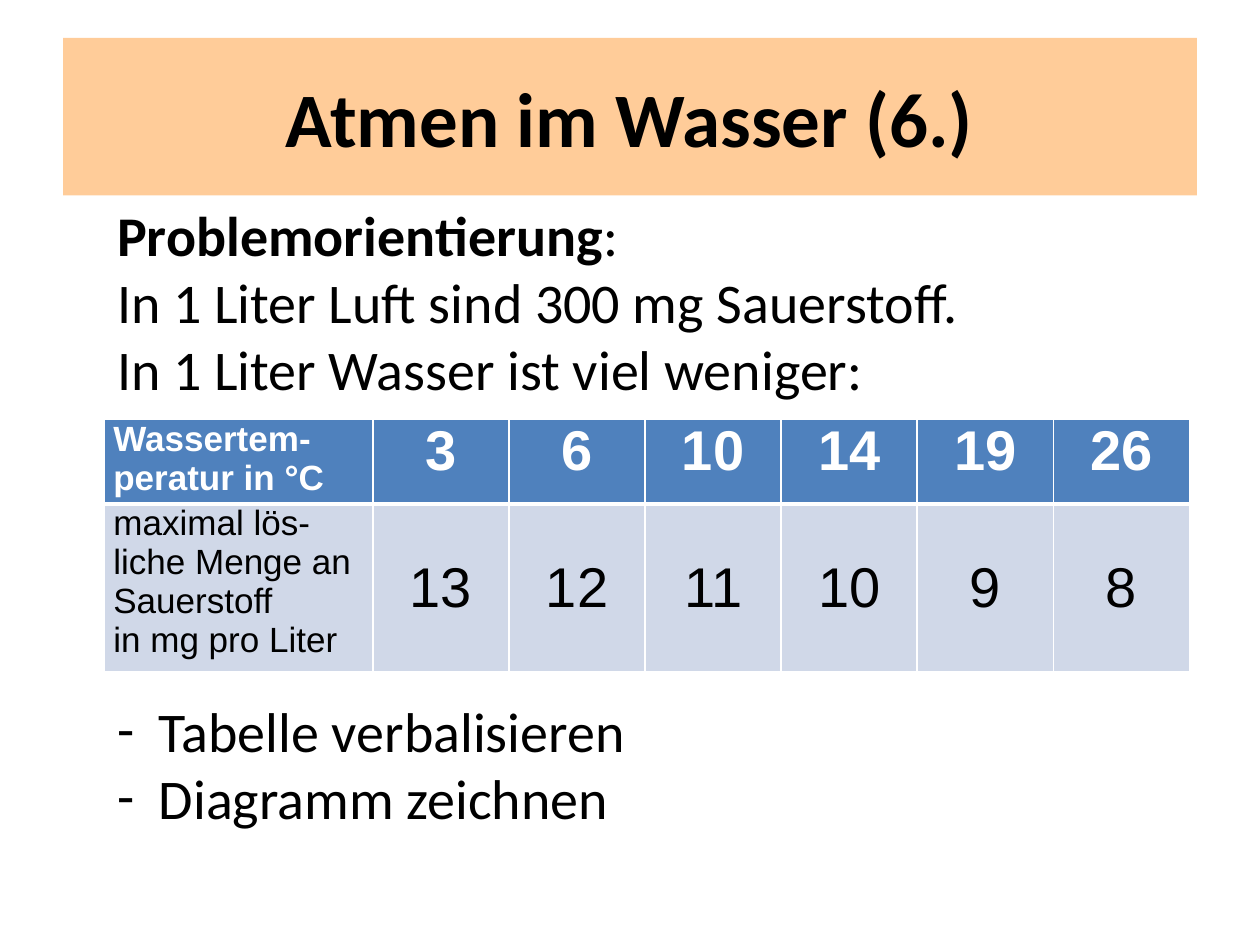
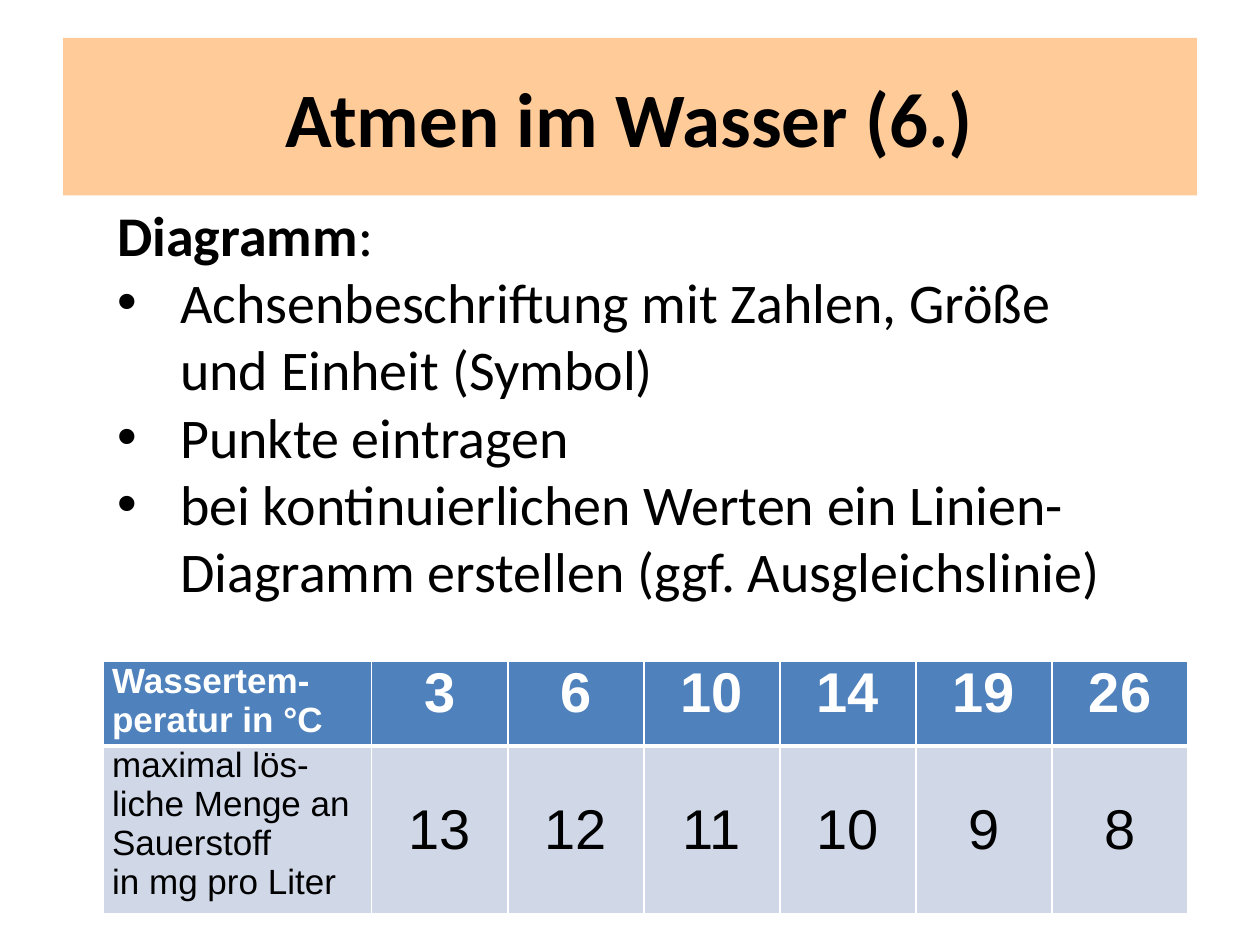
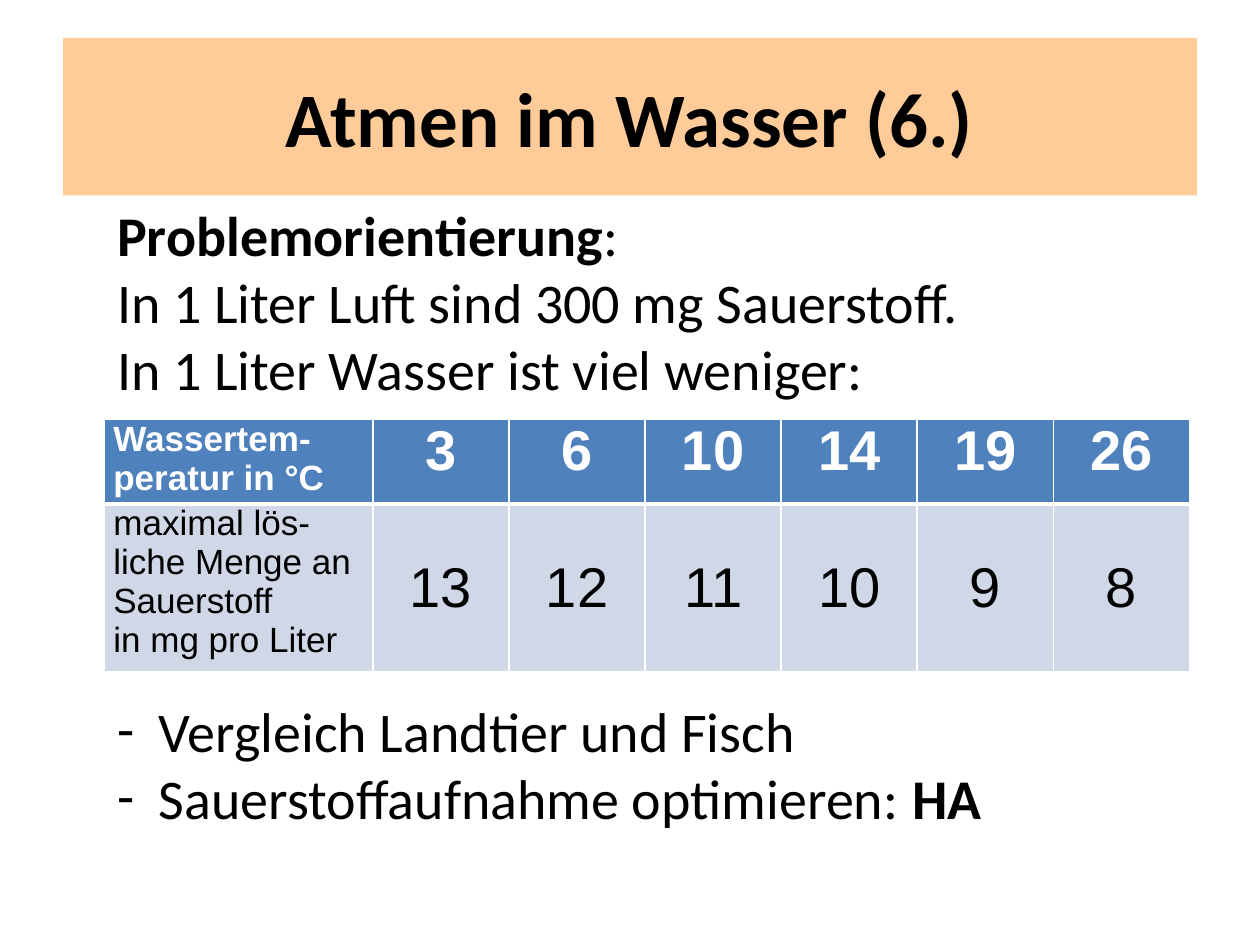
from dataclasses import dataclass

from lxml import etree
from pptx import Presentation
from pptx import util as u
from pptx.dml.color import RGBColor
from pptx.enum import text
from pptx.oxml.ns import qn


@dataclass(frozen=True)
class Theme:
    """Colours, fonts and type sizes shared by the slides."""
    black: RGBColor = RGBColor.from_string("000000")
    white: RGBColor = RGBColor.from_string("FFFFFF")
    band: RGBColor = RGBColor.from_string("FFCC99")
    header: RGBColor = RGBColor.from_string("4F81BD")
    values: RGBColor = RGBColor.from_string("D0D8E8")
    text_font: str = "Calibri"
    table_font: str = "Arial"
    title_size: int = 44
    body_size: int = 32
    label_size: int = 20
    thin: float = 1
    thick: float = 3


@dataclass(frozen=True)
class Line:
    """One paragraph, with optional bold start, bold end and bullet."""
    plain: str
    bold_start: str = ""
    bold_end: str = ""
    bullet: str = ""


THEME = Theme()
TITLE = "Atmen im Wasser (6.)"
TITLE_BOX = (0.5, 0.3, 9, 1.25)
BULLET_STYLES = {"•": (0.5, THEME.table_font), "-": (0.33, THEME.text_font)}
LABEL_WIDTH, VALUE_WIDTH = 2.13, 1.08
ROW_HEIGHTS = (0.67, 1.33)
TABLE_ROWS = (
    ("Wassertem-peratur in °C", 3, 6, 10, 14, 19, 26),
    ("maximal lös-liche Menge an Sauerstoff\nin mg pro Liter", 13, 12, 11, 10, 9, 8),
)
PROBLEM = (
    Line(":", bold_start="Problemorientierung"),
    Line("In 1 Liter Luft sind 300 mg Sauerstoff."),
    Line("In 1 Liter Wasser ist viel weniger:"),
)
DIAGRAM = (
    Line(":", bold_start="Diagramm"),
    Line("Achsenbeschriftung mit Zahlen, Größe und Einheit (Symbol)", bullet="•"),
    Line("Punkte eintragen", bullet="•"),
    Line("bei kontinuierlichen Werten ein Linien-Diagramm erstellen "
         "(ggf. Ausgleichslinie)", bullet="•"),
)
DRAWING_TASKS = (
    Line("Tabelle verbalisieren", bullet="-"),
    Line("Diagramm zeichnen", bullet="-"),
)
COMPARISON_TASKS = (
    Line("Vergleich Landtier und Fisch", bullet="-"),
    Line("Sauerstoffaufnahme optimieren: ", bold_end="HA", bullet="-"),
)


def place(shape, box):
    """Move a shape to a box of left, top, width and height in inches."""
    shape.left, shape.top, shape.width, shape.height = map(u.Inches, box)


def set_font(font, name, size, color, bold=None):
    """Apply a font name, size, colour and weight."""
    font.name, font.size, font.bold = name, u.Pt(size), bold
    font.color.rgb = color


def set_bullet(paragraph, bullet):
    """Give a paragraph a hanging bullet, or none at all."""
    properties = paragraph._p.get_or_add_pPr()
    indent, font = BULLET_STYLES.get(bullet, (0, ""))
    properties.set("marL", str(u.Inches(indent)))
    properties.set("indent", str(-u.Inches(indent)))
    if bullet:
        etree.SubElement(properties, qn("a:buFont"), typeface=font)
        etree.SubElement(properties, qn("a:buChar"), char=bullet)
    else:
        etree.SubElement(properties, qn("a:buNone"))


def add_title(slide, box):
    """Fill the title placeholder as a coloured band."""
    title = slide.shapes.title
    place(title, box)
    title.fill.solid()
    title.fill.fore_color.rgb = THEME.band
    frame = title.text_frame
    frame.text = TITLE
    frame.vertical_anchor = text.MSO_ANCHOR.MIDDLE
    paragraph = frame.paragraphs[0]
    paragraph.alignment = text.PP_ALIGN.CENTER
    set_font(paragraph.font, THEME.text_font, THEME.title_size, THEME.black, True)


def add_lines(placeholder, box, lines):
    """Write lines into a body placeholder."""
    place(placeholder, box)
    frame = placeholder.text_frame
    frame.auto_size = text.MSO_AUTO_SIZE.NONE
    for index, line in enumerate(lines):
        paragraph = frame.add_paragraph() if index else frame.paragraphs[0]
        paragraph.space_before = u.Pt(0)
        set_bullet(paragraph, line.bullet)
        set_font(paragraph.font, THEME.text_font, THEME.body_size, THEME.black)
        parts = ((line.bold_start, True), (line.plain, None), (line.bold_end, True))
        for words, bold in parts:
            if words:
                run = paragraph.add_run()
                run.text = words
                run.font.bold = bold


def set_borders(cell, top, bottom):
    """Draw white borders around a table cell."""
    properties = cell._tc.get_or_add_tcPr()
    widths = {"lnL": THEME.thin, "lnR": THEME.thin, "lnT": top, "lnB": bottom}
    for index, (side, width) in enumerate(widths.items()):
        border = etree.Element(qn(f"a:{side}"), w=str(u.Pt(width)))
        fill = etree.SubElement(border, qn("a:solidFill"))
        etree.SubElement(fill, qn("a:srgbClr"), val=str(THEME.white))
        properties.insert(index, border)


def format_cell(cell, is_header, is_label):
    """Style a cell by its row and column role."""
    cell.margin_left = cell.margin_right = u.Inches(0.07)
    cell.margin_top = cell.margin_bottom = 0
    cell.fill.solid()
    cell.fill.fore_color.rgb = THEME.header if is_header else THEME.values
    if not is_header and not is_label:
        cell.vertical_anchor = text.MSO_ANCHOR.MIDDLE
    for paragraph in cell.text_frame.paragraphs:
        if not is_label:
            paragraph.alignment = text.PP_ALIGN.CENTER
        set_font(paragraph.font, THEME.table_font,
                 THEME.label_size if is_label else THEME.body_size,
                 THEME.white if is_header else THEME.black, is_header)
    if is_header:
        set_borders(cell, THEME.thin, THEME.thick)
    else:
        set_borders(cell, THEME.thick, THEME.thin)


def add_oxygen_table(slide, left, top):
    """Add the table of dissolved oxygen by water temperature."""
    value_count = len(TABLE_ROWS[0]) - 1
    size = (LABEL_WIDTH + value_count * VALUE_WIDTH, sum(ROW_HEIGHTS))
    table = slide.shapes.add_table(len(TABLE_ROWS), value_count + 1,
                                   *map(u.Inches, (left, top, *size))).table
    table.horz_banding = False
    for index, column in enumerate(table.columns):
        column.width = u.Inches(VALUE_WIDTH if index else LABEL_WIDTH)
    for row_index, values in enumerate(TABLE_ROWS):
        table.rows[row_index].height = u.Inches(ROW_HEIGHTS[row_index])
        for column_index, value in enumerate(values):
            cell = table.cell(row_index, column_index)
            cell.text = str(value)
            format_cell(cell, row_index == 0, column_index == 0)


def add_problem_slide(presentation, tasks, tasks_width):
    """Add a slide with the problem, the table and tasks below it."""
    slide = presentation.slides.add_slide(presentation.slide_layouts[3])
    add_title(slide, TITLE_BOX)
    add_lines(slide.placeholders[1], (0.83, 1.54, 8.35, 2.79), PROBLEM)
    add_oxygen_table(slide, 0.83, 3.33)
    add_lines(slide.placeholders[2], (0.83, 5.48, tasks_width, 1.18), tasks)


def add_diagram_slide(presentation):
    """Add the slide with the rules for the diagram above the table."""
    slide = presentation.slides.add_slide(presentation.slide_layouts[1])
    add_title(slide, TITLE_BOX)
    add_lines(slide.placeholders[1], (0.83, 1.54, 8.35, 4.41), DIAGRAM)
    add_oxygen_table(slide, 0.82, 5.25)


def main():
    """Build and save the presentation."""
    presentation = Presentation()
    presentation.slide_width, presentation.slide_height = u.Inches(10), u.Inches(7.5)
    add_problem_slide(presentation, DRAWING_TASKS, 4.72)
    add_diagram_slide(presentation)
    add_problem_slide(presentation, COMPARISON_TASKS, 8.82)
    presentation.save("out.pptx")


if __name__ == "__main__":
    main()
